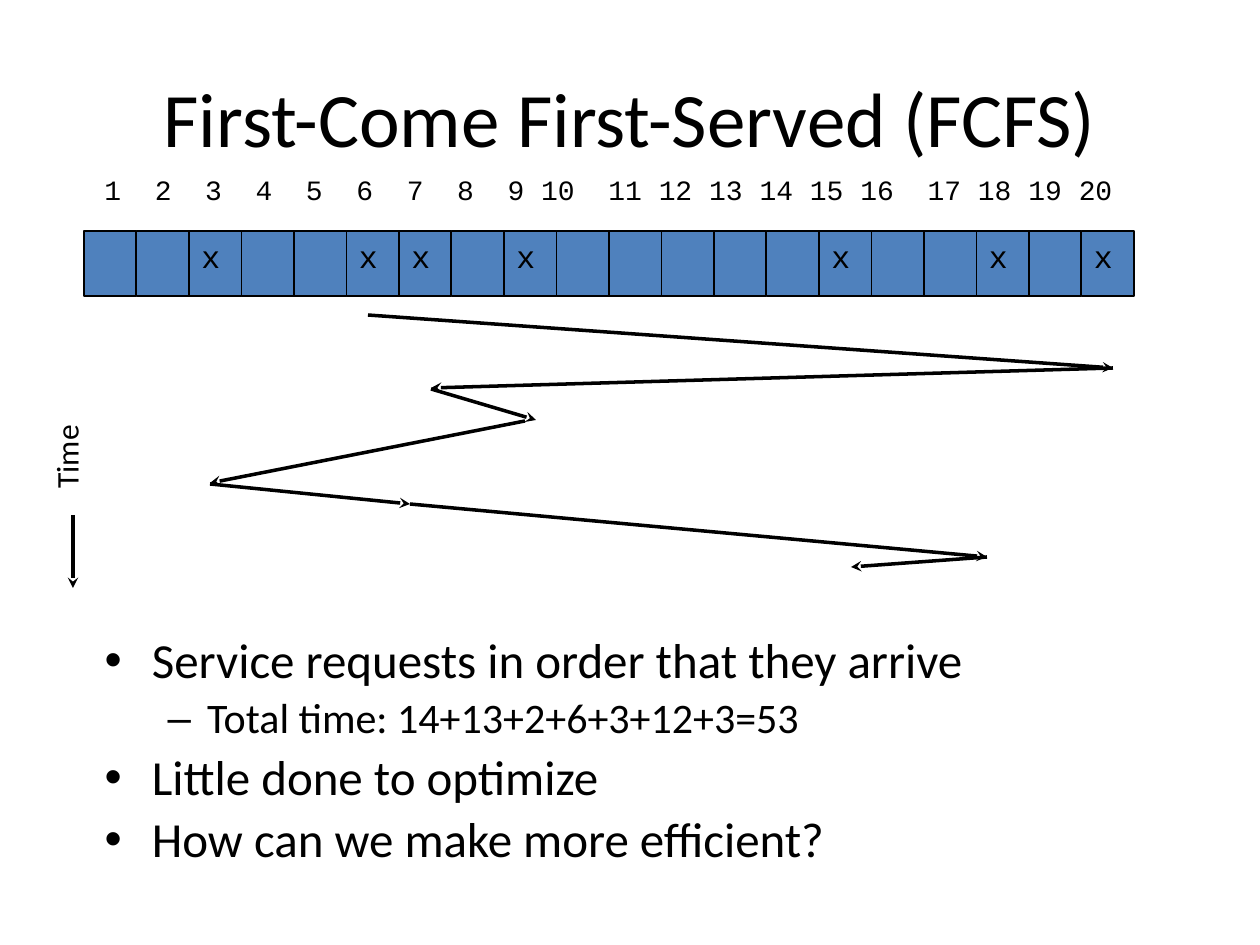
from lxml import etree
from pptx import Presentation
from pptx.dml.color import RGBColor
from pptx.enum.shapes import MSO_CONNECTOR, MSO_SHAPE
from pptx.enum.text import MSO_ANCHOR, PP_ALIGN
from pptx.oxml.ns import qn
from pptx.util import Pt

RECTANGLE = MSO_SHAPE.RECTANGLE
STRAIGHT = MSO_CONNECTOR.STRAIGHT
TOP = MSO_ANCHOR.TOP
LEFT = PP_ALIGN.LEFT

BLACK = RGBColor(0x00, 0x00, 0x00)
BLUE = RGBColor(0x4F, 0x81, 0xBD)
SANS = "Calibri"
MONO = "Courier New"

TRACK_COUNT = 20
REQUESTED_TRACKS = {3, 6, 7, 9, 15, 18, 20}
BULLETS = [
    (0, "Service requests in order that they arrive"),
    (1, "Total time: 14+13+2+6+3+12+3=53"),
    (0, "Little done to optimize"),
    (0, "How can we make more efficient?"),
]
BULLET_SIZES = [28, 24]
HEAD_MOVES = [
    (0, 0, 745, 53),
    (745, 53, 63, 73),
    (63, 74, 168, 105),
    (157, 106, -158, 168),
    (-158, 169, 42, 189),
    (42, 189, 619, 242),
    (619, 242, 483, 252),
]


def px(value):
    return value * 914400 // 126


def place(shape, box):
    shape.left, shape.top, shape.width, shape.height = map(px, box)


def add_run(paragraph, text, size, font=SANS):
    run = paragraph.add_run()
    run.text = text
    run.font.size = Pt(size)
    run.font.name = font
    run.font.color.rgb = BLACK


def add_label(slide, box):
    label = slide.shapes.add_textbox(*map(px, box))
    label.text_frame.word_wrap = True
    return label


def add_arrow(slide, x1, y1, x2, y2):
    arrow = slide.shapes.add_connector(STRAIGHT, px(x1), px(y1), px(x2), px(y2))
    arrow.line.color.rgb = BLACK
    arrow.line.width = Pt(2)
    etree.SubElement(arrow.line._get_or_add_ln(), qn("a:tailEnd"), type="stealth")
    etree.SubElement(arrow._element.spPr, qn("a:effectLst"))


def fill_title(slide, box):
    title = slide.shapes.title
    place(title, box)
    add_run(title.text_frame.paragraphs[0], "First-Come First-Served (FCFS)", 44)


def fill_body(slide, box):
    body = slide.placeholders[1]
    place(body, box)
    frame = body.text_frame
    for index, (level, text) in enumerate(BULLETS):
        paragraph = frame.add_paragraph() if index else frame.paragraphs[0]
        paragraph.level = level
        paragraph.line_spacing = 0.9
        add_run(paragraph, text, BULLET_SIZES[level])


def add_tracks(slide, box):
    left, top, width, height = box
    group = slide.shapes.add_group_shape()
    for index in range(TRACK_COUNT):
        cell = group.shapes.add_shape(
            RECTANGLE,
            px(left) + px(width) * index // TRACK_COUNT,
            px(top),
            px(width) // TRACK_COUNT,
            px(height),
        )
        cell.shadow.inherit = False
        cell.fill.solid()
        cell.fill.fore_color.rgb = BLUE
        cell.line.color.rgb = BLACK
        cell.line.width = Pt(1)
        if index + 1 in REQUESTED_TRACKS:
            cell.text_frame.vertical_anchor = TOP
            paragraph = cell.text_frame.paragraphs[0]
            paragraph.alignment = LEFT
            add_run(paragraph, "x", 18, MONO)


def number_column(index):
    if index == 9:
        return 3 * index - 1
    return 3 * index + (index > 15)


def add_track_numbers(slide, box):
    paragraph = add_label(slide, box).text_frame.paragraphs[0]
    properties = paragraph._p.get_or_add_pPr()
    tabs = etree.SubElement(properties, qn("a:tabLst"))
    for index in range(1, TRACK_COUNT):
        position = px(number_column(index) * 84) // 5
        etree.SubElement(tabs, qn("a:tab"), pos=str(position), algn="l")
    numbers = "\t".join(str(index + 1) for index in range(TRACK_COUNT))
    add_run(paragraph, numbers, 16, MONO)


def add_head_path(slide, left, top):
    for x1, y1, x2, y2 in HEAD_MOVES:
        add_arrow(slide, left + x1, top + y1, left + x2, top + y2)


def add_time_axis(slide, box):
    left, top, width, height = box
    label = add_label(slide, box)
    label.rotation = 270
    add_run(label.text_frame.paragraphs[0], "Time", 18)
    center = left + width // 2 + 1
    add_arrow(slide, center, top + 102, center, top + 175)


def main():
    presentation = Presentation()
    presentation.slide_width = px(1260)
    presentation.slide_height = px(945)
    slide = presentation.slides.add_slide(presentation.slide_layouts[1])
    fill_title(slide, (63, 38, 1134, 158))
    fill_body(slide, (92, 630, 1071, 284))
    add_tracks(slide, (84, 231, 1050, 65))
    add_track_numbers(slide, (92, 166, 1045, 63))
    add_head_path(slide, 368, 315)
    add_time_axis(slide, (16, 413, 113, 63))
    presentation.save("out.pptx")


if __name__ == "__main__":
    main()
